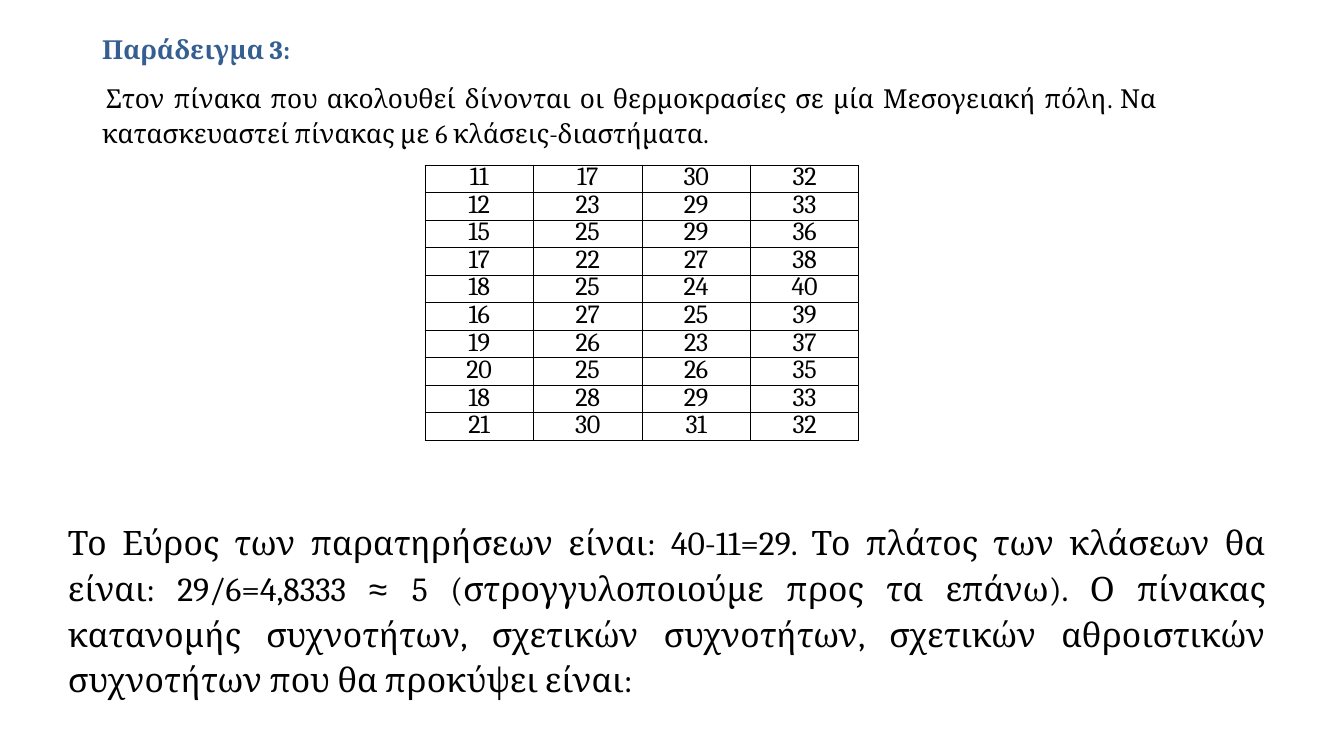
"""Slide with a temperature table and the class width worked out from it."""
from lxml.etree import SubElement
from pptx import Presentation
from pptx.dml.color import RGBColor
from pptx.enum.text import MSO_AUTO_SIZE, PP_ALIGN as AL
from pptx.oxml.ns import qn
from pptx.util import Pt

SCALE = 914400 / 134.4
BLACK = RGBColor(0, 0, 0)
BLUE = RGBColor(0x36, 0x5F, 0x91)


def px(n):
    return round(n * SCALE)


def add_text(p, runs, spc=0, fmt=None, **font):
    for name, value in (fmt or {}).items():
        setattr(p, name, value)
    for text, face in runs:
        r = p.add_run()
        r.text = text
        for name, value in {"name": face, "color": BLACK, **font}.items():
            if name == "color":
                r.font.color.rgb = value
            else:
                setattr(r.font, name, value)
        if spc:
            r.font._element.set("spc", str(spc))


prs = Presentation()
prs.slide_width, prs.slide_height = px(1344), px(756)
s = prs.slides.add_slide(prs.slide_layouts[6])

EXAMPLE = [
    (dict(), [("Παράδειγμα 3:", "Cambria")],
     dict(size=Pt(14), bold=True, color=BLUE), dict(marL=px(1))),
    (dict(alignment=AL.JUSTIFY, line_spacing=1.12, space_before=Pt(7.8)),
     [("Στον πίνακα που ακολουθεί δίνονται οι θερμοκρασίες σε μία Μεσογειακή πόλη. "
       "Να κατασκευαστεί πίνακας με 6 κλάσεις-διαστήματα.", "Cambria")],
     dict(size=Pt(14)), dict(marL=px(1), marR=px(164), indent=px(4))),
]
RANGE = [
    (dict(alignment=AL.JUSTIFY, line_spacing=1.14),
     [("Το Εύρος των παρατηρήσεων είναι: 40-11=29. Το πλάτος των κλάσεων θα "
       "είναι: 29/6=4,8333 ", "Cambria"),
      ("≈ ", "Arial"),
      ("5 (στρογγυλοποιούμε προς τα επάνω). Ο πίνακας κατανομής συχνοτήτων, "
       "σχετικών συχνοτήτων, σχετικών αθροιστικών συχνοτήτων που θα προκύψει είναι:",
       "Cambria")],
     dict(size=Pt(18)), dict(marL=px(1))),
]

for box, top_inset, paragraphs in [((101, 31, 1220, 120), 2, EXAMPLE),
                                   ((67, 513, 1199, 188), 3, RANGE)]:
    tf = s.shapes.add_textbox(*map(px, box)).text_frame
    frame = dict(word_wrap=True, auto_size=MSO_AUTO_SIZE.SHAPE_TO_FIT_TEXT, margin_left=0,
                 margin_top=px(top_inset), margin_right=0, margin_bottom=0)
    for name, value in frame.items():
        setattr(tf, name, value)
    for i, (fmt, runs, font, indents) in enumerate(paragraphs):
        p = tf.add_paragraph() if i else tf.paragraphs[0]
        pPr = p._p.get_or_add_pPr()
        for name, value in indents.items():
            pPr.set(name, str(value))
        add_text(p, runs, fmt=fmt, **font)

TEMPERATURES = [
    (11, 17, 30, 32), (12, 23, 29, 33), (15, 25, 29, 36), (17, 22, 27, 38),
    (18, 25, 24, 40), (16, 27, 25, 39), (19, 26, 23, 37), (20, 25, 26, 35),
    (18, 28, 29, 33), (21, 30, 31, 32),
]
table = s.shapes.add_table(10, 4, px(425), px(165), px(434), px(270)).table
table.first_row = table.horz_banding = False
for row, values in zip(table.rows, TEMPERATURES):
    for cell, value in zip(row.cells, values):
        for side in ("left", "top", "right", "bottom"):
            setattr(cell, f"margin_{side}", 0)
        tcPr = cell._tc.get_or_add_tcPr()
        for edge in ("lnL", "lnR", "lnT", "lnB"):
            ln = SubElement(tcPr, qn(f"a:{edge}"), w=str(Pt(0.5)))
            SubElement(SubElement(ln, qn("a:solidFill")), qn("a:srgbClr"), val=str(BLACK))
        cell.fill.background()
        add_text(cell.text_frame.paragraphs[0], [(str(value), "Cambria")], spc=-20,
                 fmt=dict(alignment=AL.CENTER, line_spacing=Pt(14.7)), size=Pt(14))

prs.save("out.pptx")
